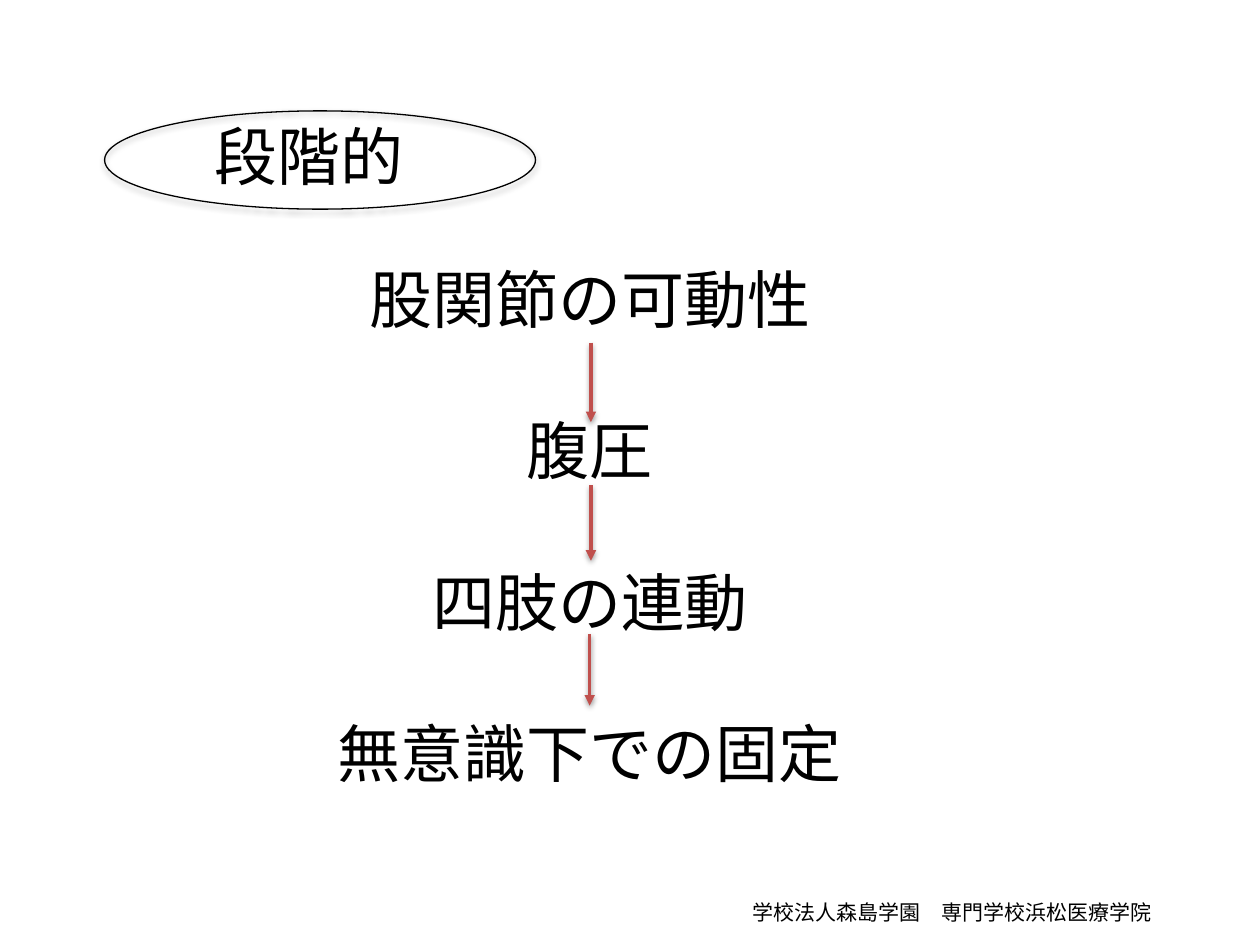
"""Build a slide showing the staged progression from hip mobility to unconscious stability."""
from lxml.etree import SubElement
from pptx import Presentation
from pptx.dml.color import RGBColor
from pptx.enum.shapes import MSO_CONNECTOR as CONNECTOR, MSO_SHAPE as SHAPE
from pptx.enum.text import PP_ALIGN as ALIGN
from pptx.oxml.ns import qn
from pptx.util import Inches, Pt

COLORS = {"text": "000000", "arrow": "C0504D"}
FONT = "Calibri"
STEPS = ["股関節の可動性", "腹圧", "四肢の連動", "無意識下での固定"]
ARROWS = [(4.69, 2.72, 3.35), (4.69, 3.85, 4.45), (4.68, 5.03, 5.6)]


def add_shadow(shape, opacity, distance):
    effects = SubElement(shape._element.spPr, qn("a:effectLst"))
    shadow = SubElement(effects, qn("a:outerShdw"), blurRad=str(Pt(3.1)),
                        dist=str(Pt(distance)), dir="5400000", rotWithShape="0")
    color = SubElement(shadow, qn("a:srgbClr"), val=COLORS["text"])
    SubElement(color, qn("a:alpha"), val=str(opacity * 1000))


def add_text(page, left, top, width, height, lines, size, align, gap=0):
    box = page.shapes.add_textbox(Inches(left), Inches(top), Inches(width), Inches(height))
    frame = box.text_frame
    frame.word_wrap = True
    frame.text = "\n".join(lines)
    for index, paragraph in enumerate(frame.paragraphs):
        paragraph.alignment = align
        if index:
            paragraph.space_before = Pt(gap)
        for span in paragraph.runs:
            span.font.name = FONT
            span.font.size = Pt(size)
            span.font.color.rgb = RGBColor.from_string(COLORS["text"])


def add_arrow(page, x, top, bottom):
    arrow = page.shapes.add_connector(
        CONNECTOR.STRAIGHT, Inches(x), Inches(top), Inches(x), Inches(bottom))
    arrow.line.color.rgb = RGBColor.from_string(COLORS["arrow"])
    arrow.line.width = Pt(2)
    SubElement(arrow.line._get_or_add_ln(), qn("a:tailEnd"), type="triangle")
    add_shadow(arrow, 38, 1.6)


def add_ellipse(page, left, top, width, height):
    ellipse = page.shapes.add_shape(
        SHAPE.OVAL, Inches(left), Inches(top), Inches(width), Inches(height))
    ellipse.fill.background()
    ellipse.line.color.rgb = RGBColor.from_string(COLORS["text"])
    ellipse.line.width = Pt(0.75)
    add_shadow(ellipse, 35, 1.8)


def main():
    deck = Presentation()
    deck.slide_width, deck.slide_height = Inches(10), Inches(7.5)
    page = deck.slides.add_slide(deck.slide_layouts[6])
    add_text(page, 5.68, 7.09, 3.56, 0.3, ["学校法人森島学園　専門学校浜松医療学院"], 12, ALIGN.RIGHT)
    for x, top, bottom in ARROWS:
        add_arrow(page, x, top, bottom)
    add_text(page, 1.26, 2.02, 6.84, 4.34, STEPS, 36, ALIGN.CENTER, gap=43.2)
    add_text(page, 1.6, 0.88, 4.05, 0.71, ["段階的"], 36, ALIGN.LEFT)
    add_ellipse(page, 0.83, 0.88, 3.42, 0.78)
    deck.save("out.pptx")


if __name__ == "__main__":
    main()
